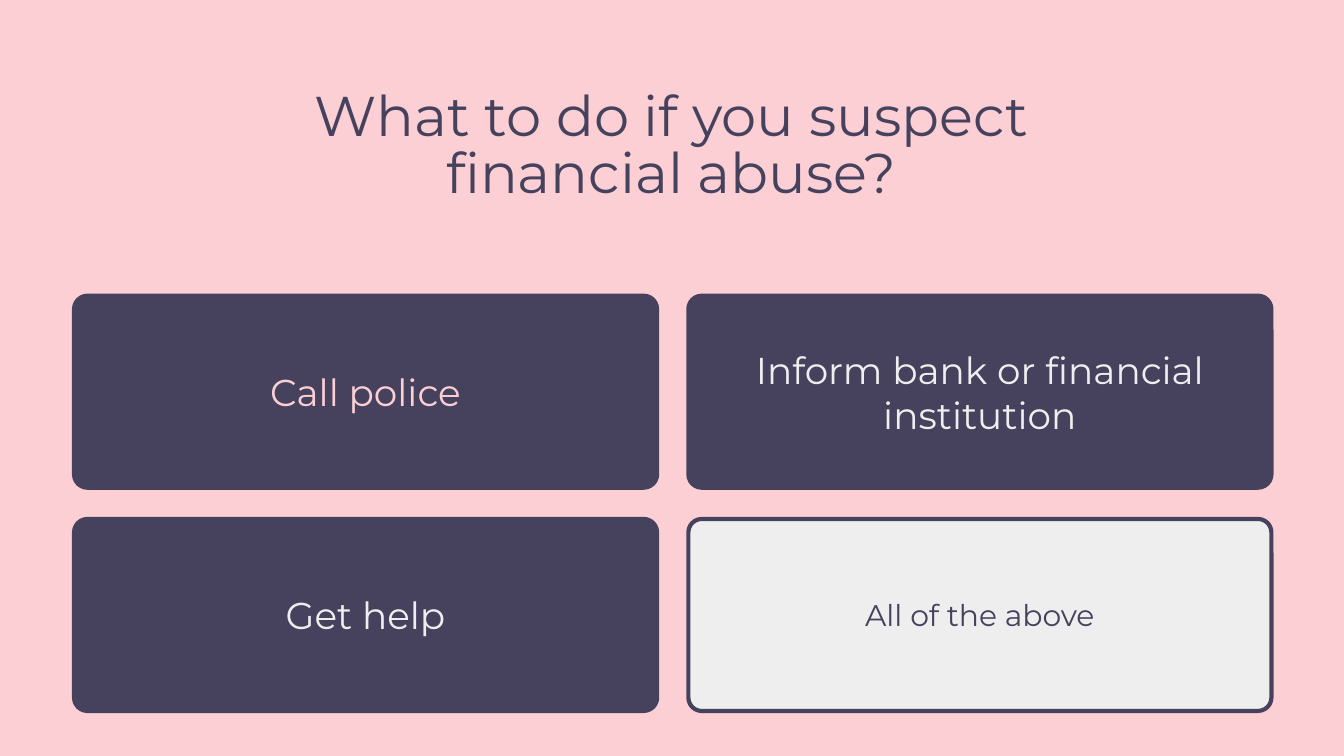
from dataclasses import dataclass

from pptx import Presentation
from pptx.dml.color import RGBColor
from pptx.enum.shapes import MSO_SHAPE as Shape
from pptx.enum.text import MSO_ANCHOR as Anchor, PP_ALIGN as Align
from pptx.util import Cm, Pt


@dataclass(frozen=True)
class Theme:
    """Colours, font and type sizes of the deck."""

    pink: RGBColor = RGBColor(0xFB, 0xCF, 0xD4)
    indigo: RGBColor = RGBColor(0x46, 0x42, 0x5E)
    pale: RGBColor = RGBColor(0xEE, 0xEE, 0xEE)
    font: str = "Montserrat"
    title_size: int = 30
    option_size: int = 20
    answer_size: int = 16


@dataclass(frozen=True)
class Box:
    """A rectangle measured in centimetres."""

    left: float
    top: float
    width: float
    height: float

    def lengths(self):
        """Return the four lengths for python-pptx."""
        return Cm(self.left), Cm(self.top), Cm(self.width), Cm(self.height)

    def cell(self, row, column, gap):
        """Return one cell of a two by two grid inside this box."""
        width = (self.width - gap) / 2
        height = (self.height - gap) / 2
        return Box(self.left + column * (width + gap),
                   self.top + row * (height + gap), width, height)


THEME = Theme()
OPTIONS = [
    [("Call police", THEME.option_size, THEME.pink, THEME.indigo),
     ("Inform bank or financial institution", THEME.option_size, THEME.pale, THEME.indigo)],
    [("Get help", THEME.option_size, THEME.pale, THEME.indigo),
     ("All of the above", THEME.answer_size, THEME.indigo, THEME.pale)],
]


def write(shape, text, size, colour, anchor, line_spacing=1.0):
    """Write one centred paragraph into a shape."""
    frame = shape.text_frame
    frame.word_wrap = True
    frame.vertical_anchor = anchor
    frame.margin_left = frame.margin_right = Cm(0.25)
    frame.margin_top = frame.margin_bottom = Cm(0.25)
    para = frame.paragraphs[0]
    para.alignment = Align.CENTER
    para.line_spacing = line_spacing
    span = para.add_run()
    span.text = text
    span.font.name = THEME.font
    span.font.size = Pt(size)
    span.font.color.rgb = colour


def add_question(page, box):
    """Place the question in its box."""
    title = page.shapes.add_textbox(*box.lengths())
    write(title, "What to do if you suspect financial abuse?",
          THEME.title_size, THEME.indigo, Anchor.TOP, 0.85)


def add_options(page, box, gap=0.59):
    """Fill a box with the grid of answer cards."""
    for row, options in enumerate(OPTIONS):
        for column, (text, size, ink, fill) in enumerate(options):
            card = page.shapes.add_shape(
                Shape.ROUNDED_RECTANGLE, *box.cell(row, column, gap).lengths())
            card.adjustments[0] = 0.07
            card.shadow.inherit = False
            card.fill.solid()
            card.fill.fore_color.rgb = fill
            card.line.color.rgb = THEME.indigo
            card.line.width = Pt(2.25)
            write(card, text, size, ink, Anchor.MIDDLE)


def main():
    """Build the quiz slide and save it."""
    deck = Presentation()
    deck.slide_width, deck.slide_height = Cm(25.4), Cm(14.29)
    page = deck.slides.add_slide(deck.slide_layouts[6])
    page.background.fill.solid()
    page.background.fill.fore_color.rgb = THEME.pink
    add_question(page, Box(4.5, 1.47, 16.38, 2.67))
    add_options(page, Box(1.4, 5.59, 22.63, 7.85))
    deck.save("out.pptx")


if __name__ == "__main__":
    main()
